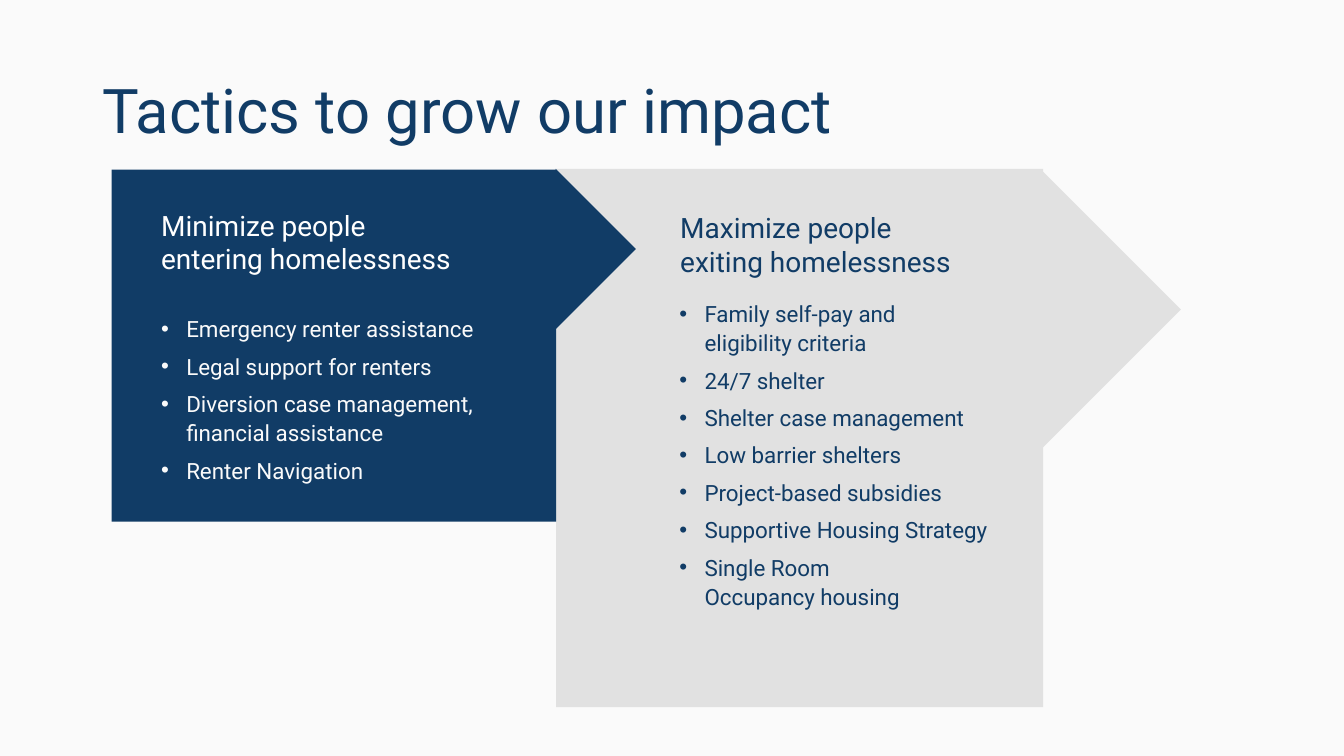
import copy
from dataclasses import dataclass

import pptx
import pptx.dml.color
import pptx.enum.shapes
import pptx.enum.text
import pptx.oxml
import pptx.oxml.ns
import pptx.util

NAVY = pptx.dml.color.RGBColor(0x11, 0x3C, 0x66)
GREY = pptx.dml.color.RGBColor(0xE1, 0xE1, 0xE1)
PALE = pptx.dml.color.RGBColor(0xFA, 0xFA, 0xFA)
WHITE = pptx.dml.color.RGBColor(0xFF, 0xFF, 0xFF)

FONT = "Roboto"
KIND = pptx.enum.shapes.MSO_SHAPE
CELL = pptx.util.Inches(1) / 12  # the slide is 160 columns by 90 rows


@dataclass
class Box:
    """Place on the grid, in columns and rows."""
    col: float
    row: float
    cols: float
    rows: float

    def place(self) -> list[pptx.util.Emu]:
        return [pptx.util.Emu(round(n * CELL))
                for n in (self.col, self.row, self.cols, self.rows)]


@dataclass
class Panel:
    """A block with an arrow behind a heading and a list."""
    block: Box
    arrow: Box
    head: str
    head_box: Box
    items: list[str]
    list_box: Box
    fill: pptx.dml.color.RGBColor
    head_ink: pptx.dml.color.RGBColor
    list_ink: pptx.dml.color.RGBColor


PANELS = [
    Panel(Box(66.2, 20.1, 58, 64.1), Box(66.2, 20.3, 74.4, 33.1),
          "Maximize people \nexiting homelessness", Box(79.8, 24.5, 36.4, 9.2),
          ["Family self-pay and \neligibility criteria", "24/7 shelter",
           "Shelter case management", "Low barrier shelters",
           "Project-based subsidies", "Supportive Housing Strategy",
           "Single Room \nOccupancy housing"],
          Box(79.7, 34.9, 43.9, 38.4), GREY, NAVY, NAVY),
    Panel(Box(13.3, 20.2, 52.9, 41.9), Box(24.5, 20.1, 51.2, 19.1),
          "Minimize people \nentering homelessness", Box(18, 24.2, 48.1, 9.2),
          ["Emergency renter assistance", "Legal support for renters",
           "Diversion case management, financial assistance",
           "Renter Navigation"],
          Box(18, 36.7, 43, 21.5), NAVY, WHITE, PALE),
]


def add_dot(para) -> None:
    """Give a paragraph a hanging bullet."""
    props = para._p.get_or_add_pPr()
    indent = pptx.util.Inches(0.25)
    props.set("marL", str(indent))
    props.set("indent", str(-indent))
    for tag, key, value in (("buFont", "typeface", "Arial"),
                            ("buChar", "char", "•")):
        mark = pptx.oxml.ns.qn(f"a:{tag}")
        props.append(props.makeelement(mark, {key: value}))


def write(frame, texts: list[str], *, size: float, ink, space: float = 1,
          after: float = 0, dots: bool = False) -> None:
    """Fill a text frame, one paragraph for each text."""
    frame.word_wrap = True
    for i, text in enumerate(texts):
        para = frame.add_paragraph() if i else frame.paragraphs[0]
        if dots:
            add_dot(para)
        para.alignment = pptx.enum.text.PP_ALIGN.LEFT
        para.line_spacing = space
        para.space_after = pptx.util.Pt(after)
        for j, line in enumerate(text.split("\n")):
            if j:
                para.add_line_break()
            run = para.add_run()
            run.text = line
            run.font.size = pptx.util.Pt(size)
            run.font.name = FONT
            run.font.color.rgb = ink
        # Line breaks take the size of the text around them
        for brk in para._p.findall(pptx.oxml.ns.qn("a:br")):
            brk.append(copy.deepcopy(run._r.rPr))


def add_block(slide, kind, box: Box, fill) -> None:
    shape = slide.shapes.add_shape(kind, *box.place())
    shape.shadow.inherit = False
    shape.fill.solid()
    shape.fill.fore_color.rgb = fill
    shape.line.fill.background()


def add_text(slide, box: Box, texts: list[str], **form) -> None:
    frame = slide.shapes.add_textbox(*box.place()).text_frame
    frame.auto_size = pptx.enum.text.MSO_AUTO_SIZE.SHAPE_TO_FIT_TEXT
    write(frame, texts, **form)


def add_panel(slide, panel: Panel) -> None:
    add_block(slide, KIND.RECTANGLE, panel.block, panel.fill)
    add_block(slide, KIND.RIGHT_ARROW, panel.arrow, panel.fill)
    add_text(slide, panel.head_box, [panel.head], size=20, ink=panel.head_ink)
    add_text(slide, panel.list_box, panel.items, size=16, ink=panel.list_ink,
             space=1.08, after=6, dots=True)


def main() -> None:
    deck = pptx.Presentation()
    deck.slide_width = round(160 * CELL)
    deck.slide_height = round(90 * CELL)
    slide = deck.slides.add_slide(deck.slide_layouts[5])
    slide.background.fill.solid()
    slide.background.fill.fore_color.rgb = PALE

    # Title
    title = slide.shapes.title
    title.left, title.top, title.width, title.height = Box(
        11, 4.8, 138, 17.4).place()
    title.text_frame.vertical_anchor = pptx.enum.text.MSO_ANCHOR.MIDDLE
    write(title.text_frame, ["Tactics to grow our impact"], size=44, ink=NAVY,
          space=0.9)

    # Panels, the right one behind the left one's arrow
    for panel in PANELS:
        add_panel(slide, panel)

    deck.save("out.pptx")


if __name__ == "__main__":
    main()
